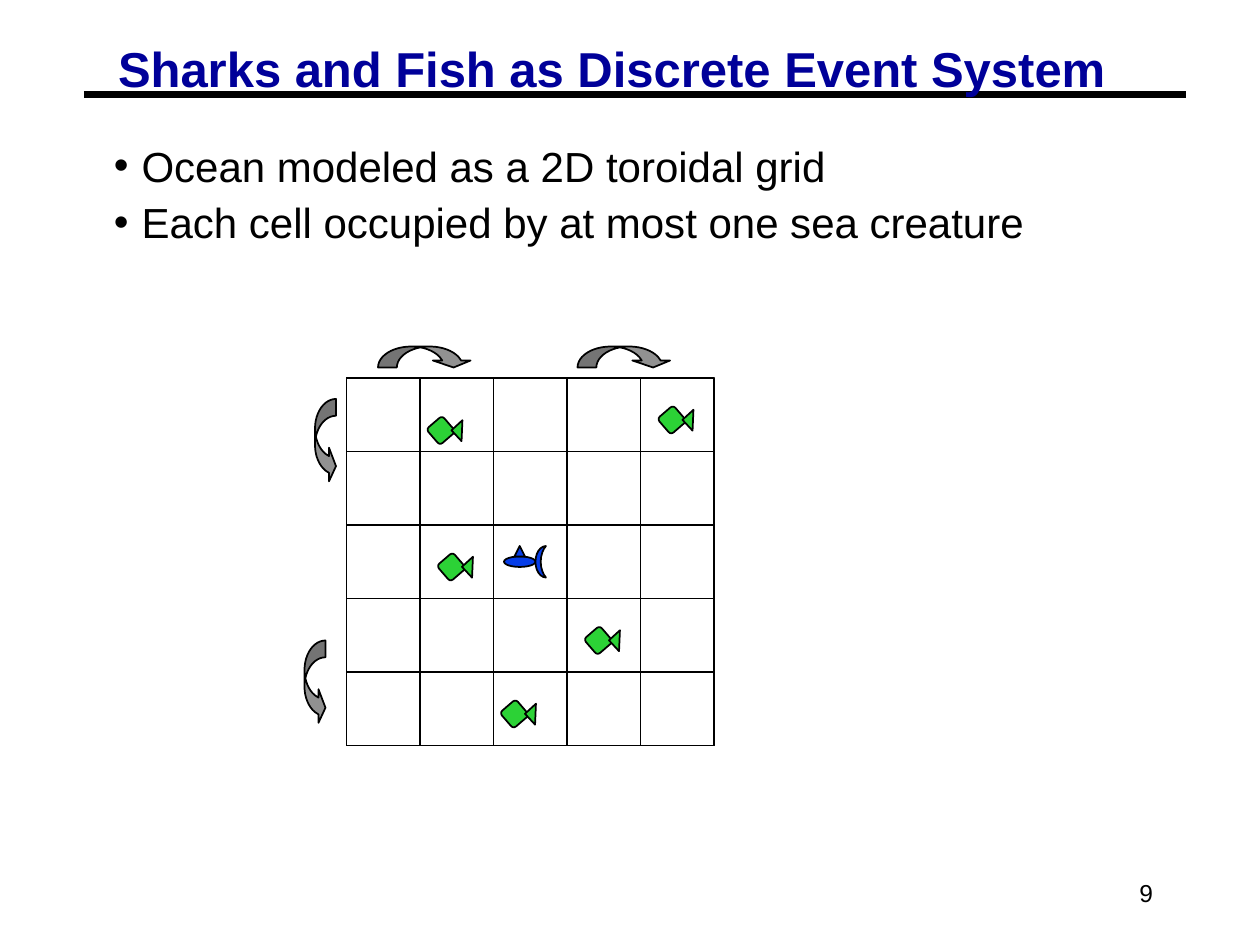
from pptx import Presentation
from pptx.dml.color import RGBColor
from pptx.enum.shapes import MSO_CONNECTOR, MSO_SHAPE
from pptx.enum.text import MSO_ANCHOR, MSO_AUTO_SIZE, PP_ALIGN
from pptx.oxml.ns import qn
from pptx.util import Inches, Pt
from lxml.etree import SubElement

THEME = {
    "font": "Arial", "title": "000099", "ink": "000000",
    "fish": "2CD236", "shark": "063DE8", "arrow": "919191",
    "title_pt": 28, "body_pt": 24, "number_pt": 14,
}

prs = Presentation()
prs.slide_width, prs.slide_height = Inches(10), Inches(7.5)
U = prs.slide_width / 120  # the slide is a grid of 120 columns by 90 rows


def draw(parent, kind, box, fill=None, rot=0, adj=()):
    """Add an outlined shape; box is left, top, width, height in grid units."""
    sp = parent.shapes.add_shape(kind, *(round(v * U) for v in box))
    sp.shadow.inherit = False
    sp.rotation = rot
    for i, value in enumerate(adj):
        sp.adjustments[i] = value
    if fill:
        sp.fill.solid()
        sp.fill.fore_color.rgb = RGBColor.from_string(THEME[fill])
    else:
        sp.fill.background()
    sp.line.color.rgb = RGBColor.from_string(THEME["ink"])
    sp.line.width = Pt(1)


def write(sp, box, text, size, color="ink", bold=False, inset=(0.07, 0.03)):
    sp.left, sp.top, sp.width, sp.height = (round(v * U) for v in box)
    tf = sp.text_frame
    tf.text = text
    tf.word_wrap = True
    tf.auto_size = MSO_AUTO_SIZE.NONE
    tf.vertical_anchor = MSO_ANCHOR.TOP
    tf.margin_left = tf.margin_right = Inches(inset[0])
    tf.margin_top = tf.margin_bottom = Inches(inset[1])
    for p in tf.paragraphs:
        p.alignment = PP_ALIGN.LEFT
        for r in p.runs:
            r.font.name, r.font.size, r.font.bold = THEME["font"], Pt(THEME[size]), bold
            r.font.color.rgb = RGBColor.from_string(THEME[color])
    return tf


s = prs.slides.add_slide(prs.slide_layouts[5])

# Title, with its rule behind it
tf = write(s.shapes.title, (10.4, 4.1, 101.5, 5.5),
           "Sharks and Fish as Discrete Event System", "title_pt", "title", True)
tf.paragraphs[0].line_spacing = 0.87

rule = s.shapes.add_connector(MSO_CONNECTOR.STRAIGHT,
                              *(round(v * U) for v in (8, 9, 113, 9)))
rule.line.color.rgb = RGBColor.from_string(THEME["ink"])
rule.line.width = Pt(3.75)
SubElement(rule._element.spPr, qn("a:effectLst"))
s.shapes.title._element.addprevious(rule._element)

# Bullets
tf = write(s.shapes.add_textbox(0, 0, 0, 0), (10, 13, 103, 10.8),
           "Ocean modeled as a 2D toroidal grid\n"
           "Each cell occupied by at most one sea creature", "body_pt")
for p in tf.paragraphs:
    pPr = p._p.get_or_add_pPr()
    pPr.set("marL", str(Inches(0.22)))
    pPr.set("indent", str(-Inches(0.22)))
    before = SubElement(SubElement(pPr, qn("a:spcBef")), qn("a:spcPct"))
    before.set("val", "15000")
    SubElement(pPr, qn("a:buFont")).set("typeface", THEME["font"])
    SubElement(pPr, qn("a:buChar")).set("char", "•")

# Page number
tf = write(s.shapes.add_textbox(0, 0, 0, 0), (86, 82, 25, 6), "9", "number_pt",
           inset=(0.1, 0.05))
tf.vertical_anchor = MSO_ANCHOR.MIDDLE
tf.paragraphs[0].alignment = PP_ALIGN.RIGHT

# Ocean: overlapping column and row strips; row 3 is bounded by its neighbours
LEFT, TOP, CELL, N = 33, 36, 7, 5
ocean = s.shapes.add_group_shape()
for col in range(N):
    draw(ocean, MSO_SHAPE.RECTANGLE, (LEFT + col * CELL, TOP, CELL, N * CELL))
for row in (0, 1, 2, 4):
    draw(ocean, MSO_SHAPE.RECTANGLE, (LEFT, TOP + row * CELL, N * CELL, CELL))

# Fish
for x, y in ((42, 53), (48, 67), (56, 60), (41, 40), (63, 39)):
    fish = s.shapes.add_group_shape()
    draw(fish, MSO_SHAPE.ROUNDED_RECTANGLE, (x, y, 2, 2), "fish", 49.3)
    draw(fish, MSO_SHAPE.ISOSCELES_TRIANGLE, (x + 1.5, y + 0.5, 2, 1), "fish", 272.4)

# Shark: body, tail, fin
shark = s.shapes.add_group_shape()
draw(shark, MSO_SHAPE.OVAL, (48, 53, 3, 1), "shark")
draw(shark, MSO_SHAPE.MOON, (51, 52, 1, 3), "shark")
draw(shark, MSO_SHAPE.ISOSCELES_TRIANGLE, (49, 52, 1, 1), "shark")

# Wrap-around arrows
for x, y in ((30, 38), (29, 61)):
    draw(s, MSO_SHAPE.CURVED_RIGHT_ARROW, (x, y, 2, 8), "arrow", adj=(0.8, 1.6, 0.333))
for x in (55, 36):
    draw(s, MSO_SHAPE.CURVED_DOWN_ARROW, (x, 33, 9, 2), "arrow", adj=(0.9, 1.8, 0.333))

prs.save("out.pptx")
